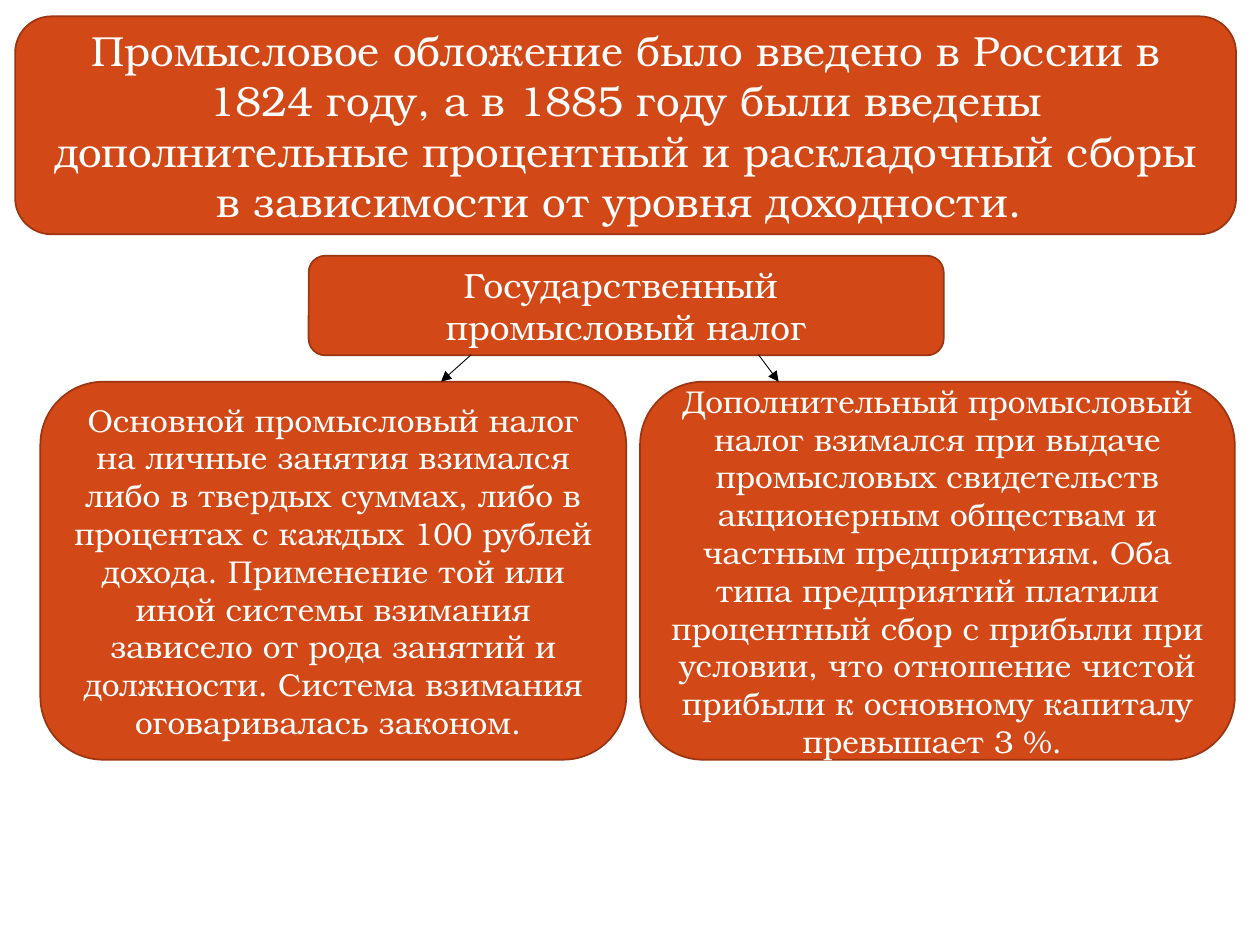
"""Builds a slide on the trade tax in Russia and its two parts."""
from lxml.etree import SubElement
from pptx import Presentation
from pptx.dml.color import RGBColor as RGB
from pptx.enum.shapes import MSO_CONNECTOR as CONN, MSO_SHAPE as SHAPE
from pptx.enum.text import MSO_ANCHOR as ANCHOR, PP_ALIGN as ALIGN
from pptx.oxml.ns import qn
from pptx.util import Inches, Pt

COLORS = {"fill": "D34817", "border": "9C3511", "text": "FFFFFF", "arrow": "000000"}
FONT = "TeX Gyre Bonum"
COLS, ROWS = 100, 75
WIDTH, HEIGHT = Inches(10), Inches(7.5)
TAX_BOTTOM, PARTS_TOP, PARTS_ROWS = 28.15, 30.3, 30

INTRO = ("Промысловое обложение было введено в России в 1824 году, а в 1885 году "
         "были введены дополнительные процентный и раскладочный сборы "
         "в зависимости от уровня доходности. ")
TAX = ["Государственный ", "промысловый налог"]
MAIN_PART = ("Основной промысловый налог на личные занятия взимался либо в твердых "
             "суммах, либо в процентах с каждых 100 рублей дохода. Применение той "
             "или иной системы взимания зависело от рода занятий и должности. "
             "Система взимания оговаривалась законом. ")
EXTRA_PART = ("Дополнительный промысловый налог взимался при выдаче промысловых "
              "свидетельств акционерным обществам и частным предприятиям. Оба типа "
              "предприятий платили процентный сбор с прибыли при условии, что "
              "отношение чистой прибыли к основному капиталу превышает 3 %. ")


def x(cols):
    """Turn grid columns into a length."""
    return int(WIDTH * cols / COLS)


def y(rows):
    """Turn grid rows into a length."""
    return int(HEIGHT * rows / ROWS)


def color(name):
    """Look up a named colour."""
    return RGB.from_string(COLORS[name])


def add_text(tf, lines, size=18, fill="text", align=ALIGN.CENTER, anchor=ANCHOR.MIDDLE):
    """Write one paragraph per line into a text frame."""
    tf.word_wrap = True
    tf.vertical_anchor = anchor
    for i, line in enumerate(lines):
        p = tf.paragraphs[0] if i == 0 else tf.add_paragraph()
        p.alignment = align
        r = p.add_run()
        r.text = line
        r.font.name, r.font.size = FONT, Pt(size)
        r.font.color.rgb = color(fill)


def add_box(s, left, top, cols, rows, lines, **fmt):
    """Add a rounded box with centred text."""
    sp = s.shapes.add_shape(SHAPE.ROUNDED_RECTANGLE, x(left), y(top), x(cols), y(rows))
    sp.shadow.inherit = False
    sp.fill.solid()
    sp.fill.fore_color.rgb = color("fill")
    sp.line.color.rgb = color("border")
    sp.line.width = Pt(1)
    add_text(sp.text_frame, lines, **fmt)


def add_arrow(s, start, end):
    """Add a thin arrow from the tax box down to one of its parts."""
    c = s.shapes.add_connector(CONN.STRAIGHT, x(start), y(TAX_BOTTOM), x(end), y(PARTS_TOP))
    c.line.color.rgb = color("arrow")
    c.line.width = Pt(0.5)
    SubElement(c.line._get_or_add_ln(), qn("a:tailEnd"), type="triangle")
    SubElement(c._element.spPr, qn("a:effectLst"))


def main():
    """Build and save the slide."""
    prs = Presentation()
    prs.slide_width, prs.slide_height = WIDTH, HEIGHT
    s = prs.slides.add_slide(prs.slide_layouts[6])
    add_box(s, 1.2, 1.3, 96.9, 17.3, [INTRO], size=24)
    add_box(s, 3.2, PARTS_TOP, 46.5, PARTS_ROWS, [MAIN_PART])
    add_box(s, 24.5, 20.3, 50.4, 7.9, TAX, size=20)
    add_box(s, 50.8, PARTS_TOP, 47.2, PARTS_ROWS, [EXTRA_PART])
    add_arrow(s, 37.4, 35)
    add_arrow(s, 60.2, 61.8)
    prs.save("out.pptx")


if __name__ == "__main__":
    main()
